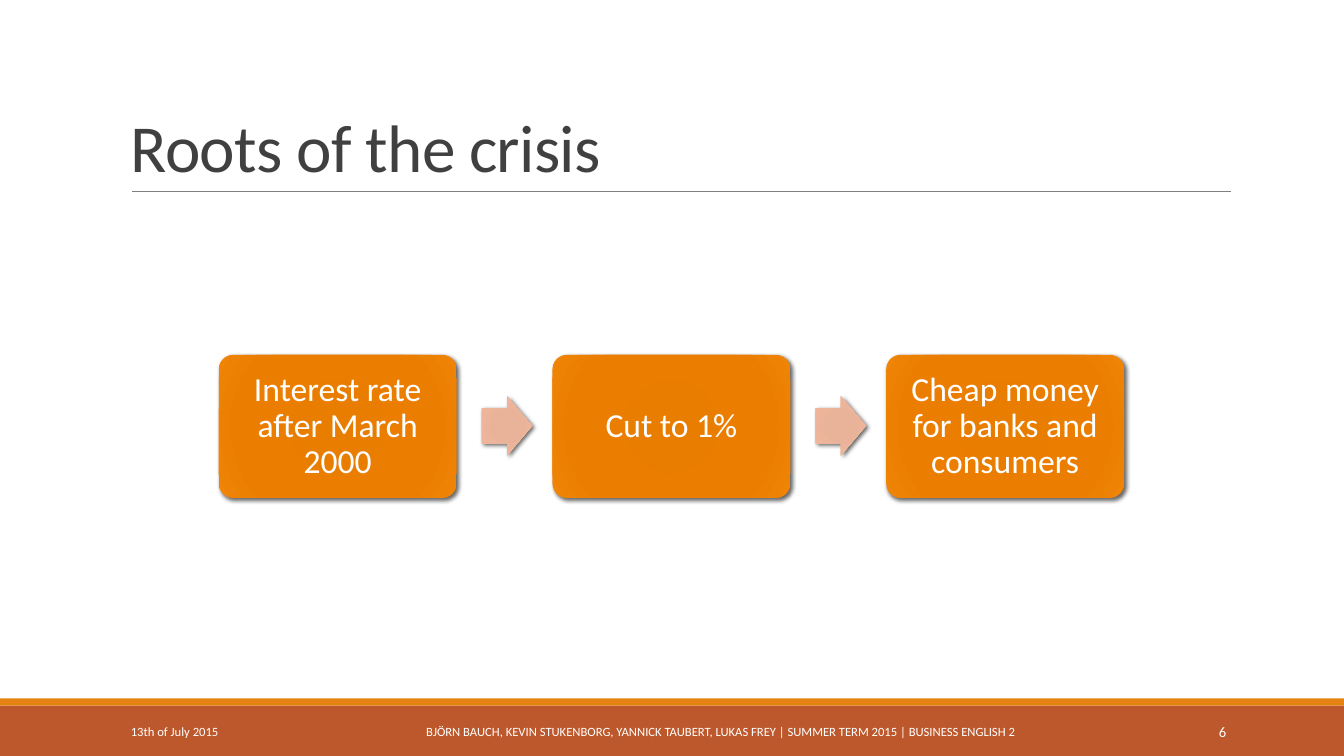
from dataclasses import dataclass

from lxml.etree import SubElement
from pptx import Presentation
from pptx.dml.color import RGBColor
from pptx.enum.shapes import MSO_CONNECTOR, MSO_SHAPE
from pptx.enum.text import MSO_ANCHOR, PP_ALIGN
from pptx.oxml.ns import qn
from pptx.util import Inches, Pt


@dataclass(frozen=True)
class Theme:
    font: str = "Calibri"
    title: str = "404040"
    rule: str = "808080"
    light: str = "FFFFFF"
    band: str = "BD582C"
    accent: str = "E48312"
    shadow: str = "000000"
    step_stops: tuple = ((0, "E57B00"), (34, "E87D00"), (70, "EB7E00"), (100, "EF8407"))
    arrow_stops: tuple = ((0, "E8B196"), (34, "E9B399"), (70, "EEB59A"), (100, "F3C0A8"))
    title_size: float = 48
    step_size: float = 24
    footer_size: float = 9
    number_size: float = 10.5


class SlideBuilder:
    def __init__(self, s, theme):
        self.s = s
        self.theme = theme

    def set_text(self, tf, text, size, color, align, anchor, spacing=1.0):
        tf.word_wrap = True
        tf.vertical_anchor = anchor
        p = tf.paragraphs[0]
        p.alignment = align
        p.line_spacing = spacing
        r = p.add_run()
        r.text = text
        p.font.name = self.theme.font
        p.font.size = Pt(size)
        p.font.color.rgb = RGBColor.from_string(color)
        return r

    def text(self, box, text, size, color, align=PP_ALIGN.LEFT,
             anchor=MSO_ANCHOR.MIDDLE, spacing=1.0):
        tf = self.s.shapes.add_textbox(*map(Inches, box)).text_frame
        return self.set_text(tf, text, size, color, align, anchor, spacing)

    def title(self, box, text):
        r = self.text(box, text, self.theme.title_size, self.theme.title,
                      anchor=MSO_ANCHOR.BOTTOM, spacing=0.85)
        r.font._element.set("spc", "-50")

    def shape(self, kind, box):
        sp = self.s.shapes.add_shape(kind, *map(Inches, box))
        sp.shadow.inherit = False
        sp.line.fill.background()
        return sp

    def bar(self, box, color):
        sp = self.shape(MSO_SHAPE.RECTANGLE, box)
        sp.fill.solid()
        sp.fill.fore_color.rgb = RGBColor.from_string(color)

    def rule(self, x1, x2, y):
        line = self.s.shapes.add_connector(
            MSO_CONNECTOR.STRAIGHT, Inches(x1), Inches(y), Inches(x2), Inches(y))
        line.line.color.rgb = RGBColor.from_string(self.theme.rule)
        line.line.width = Pt(0.5)
        SubElement(line._element.spPr, qn("a:effectLst"))

    def glossy(self, kind, box, stops, adjustments):
        sp = self.shape(kind, box)
        for i, value in enumerate(adjustments):
            sp.adjustments[i] = value
        sp.fill.background()
        spPr = sp._element.spPr
        grad = SubElement(spPr, qn("a:gradFill"), rotWithShape="1")
        spPr.replace(spPr.find(qn("a:noFill")), grad)
        gs_list = SubElement(grad, qn("a:gsLst"))
        for pos, color in stops:
            gs = SubElement(gs_list, qn("a:gs"), pos=str(pos * 1000))
            SubElement(gs, qn("a:srgbClr"), val=color)
        circle = SubElement(grad, qn("a:path"), path="circle")
        SubElement(circle, qn("a:fillToRect"), dict.fromkeys("ltrb", "100000"))
        shadow = SubElement(spPr.find(qn("a:effectLst")), qn("a:outerShdw"),
                            blurRad=str(Pt(3)), dist=str(Pt(2)),
                            dir="2700000", algn="ctr", rotWithShape="0")
        color = SubElement(shadow, qn("a:srgbClr"), val=self.theme.shadow)
        SubElement(color, qn("a:alpha"), val="60000")
        return sp

    def step(self, box, text):
        sp = self.glossy(MSO_SHAPE.ROUNDED_RECTANGLE, box, self.theme.step_stops, [0.1])
        tf = sp.text_frame
        tf.margin_left = tf.margin_right = tf.margin_top = tf.margin_bottom = Inches(0.1)
        self.set_text(tf, text, self.theme.step_size, self.theme.light,
                      PP_ALIGN.CENTER, MSO_ANCHOR.MIDDLE, 0.9)

    def arrow(self, box):
        self.glossy(MSO_SHAPE.RIGHT_ARROW, box, self.theme.arrow_stops, [0.6, 0.5])


def main():
    prs = Presentation()
    prs.slide_width, prs.slide_height = Inches(13.33), Inches(7.5)
    theme = Theme()
    b = SlideBuilder(prs.slides.add_slide(prs.slide_layouts[6]), theme)

    b.bar((0, 7, 13.33, 0.5), theme.band)
    b.bar((0, 6.93, 13.33, 0.07), theme.accent)
    b.rule(1.31, 12.21, 1.9)
    b.title((1.2, 0.31, 11, 1.59), "Roots of the crisis")

    steps = ["Interest rate after March 2000", "Cut to 1%",
             "Cheap money for banks and consumers"]
    left, pitch = 2.17, 3.31
    for i, label in enumerate(steps):
        x = left + i * pitch
        if i:
            b.arrow((x - 0.7, 3.93, 0.5, 0.59))
        b.step((x, 3.52, 2.36, 1.42), label)

    footers = [
        (1.2, 2.7, "13th of July 2015", theme.footer_size, PP_ALIGN.LEFT),
        (4.03, 6.23, "BJÖRN BAUCH, KEVIN STUKENBORG, YANNICK TAUBERT, LUKAS FREY | "
         "SUMMER TERM 2015 | BUSINESS ENGLISH 2", theme.footer_size, PP_ALIGN.CENTER),
        (10.83, 1.43, "6", theme.number_size, PP_ALIGN.RIGHT),
    ]
    for x, width, label, size, align in footers:
        b.text((x, 7.06, width, 0.4), label, size, theme.light, align)

    prs.save("out.pptx")


if __name__ == "__main__":
    main()
